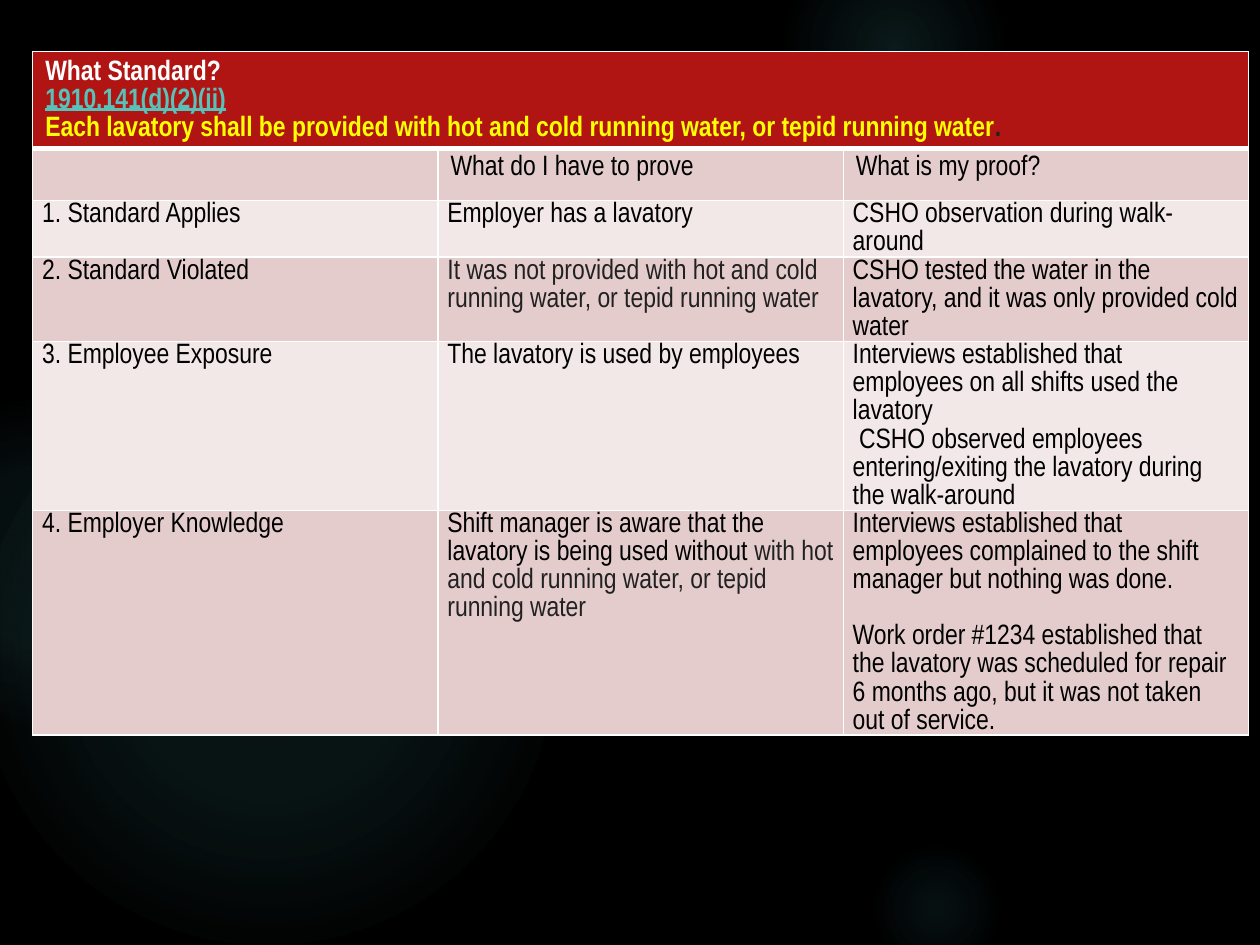
from dataclasses import dataclass

from lxml.etree import SubElement
from pptx import Presentation
from pptx.dml.color import RGBColor
from pptx.enum.shapes import MSO_SHAPE
from pptx.oxml.ns import qn
from pptx.util import Inches, Pt


@dataclass(frozen=True)
class Theme:
    font: str = "Arial Narrow"
    size: int = 16
    line_spacing: float = 1.07
    background: str = "000000"
    glow: str = "50B9C1"
    header: str = "B01513"
    dark_band: str = "E4CCCC"
    light_band: str = "F2E8E7"
    white: str = "FFFFFF"
    black: str = "000000"
    gray: str = "212121"
    link: str = "58C1BA"
    yellow: str = "FFFF00"
    border: int = 1
    header_border: int = 3


theme = Theme()

GLOWS = [
    (6.89, 1.83, 3.08, [(0, 7), (36, 6), (69, 0)]),
    (6.22, -0.5, 1.75, [(0, 14), (36, 7), (73, 0)]),
    (6.89, 6.67, 1.08, [(0, 9), (36, 5), (66, 0)]),
    (-0.17, 2.92, 4.58, [(0, 11), (36, 10), (75, 0)]),
    (-0.92, 3.17, 2.58, [(0, 8), (36, 8), (72, 0)]),
]

TITLE = [
    [("What Standard?", theme.white)],
    [("1910.141(d)(2)(ii)", theme.link)],
    [
        ("Each lavatory shall be provided with hot and cold running water, or tepid running water", theme.yellow),
        (".", theme.gray),
    ],
]
COLUMN_HEADINGS = ["", "What do I have to prove", "What is my proof?"]
ELEMENTS = [
    ["1. Standard Applies", "Employer has a lavatory", "CSHO observation during walk-around"],
    [
        "2. Standard Violated",
        [[("It was not provided with hot and cold running water, or tepid running water", theme.gray)]],
        "CSHO tested the water in the lavatory, and it was only provided cold water",
    ],
    [
        "3. Employee Exposure",
        "The lavatory is used by employees",
        [
            [("Interviews established that employees on all shifts used the lavatory", theme.black)],
            [(" CSHO observed employees entering/exiting the lavatory during the walk-around", theme.black)],
        ],
    ],
    [
        "4. Employer Knowledge",
        [[
            ("Shift manager is aware that the lavatory is being used without ", theme.black),
            ("with hot and cold running water, or tepid running water", theme.gray),
        ]],
        [
            [("Interviews established that employees complained to the shift manager but nothing was done.", theme.black)],
            [("Work order #1234 established that the lavatory was scheduled for repair 6 months ago, "
              "but it was not taken out of service.", theme.black)],
        ],
    ],
]

TABLE_LEFT, TABLE_TOP, TABLE_WIDTH = 0.26, 0.41, 9.65
ROW_HEIGHTS = [0.63, 0.41] + [0.45] * len(ELEMENTS)
COLUMN_COUNT = len(COLUMN_HEADINGS)
SIDE_MARGINS_TOTAL = 0.15


def add_glow(slide, left, top, diameter, stops):
    shape = slide.shapes.add_shape(
        MSO_SHAPE.OVAL, Inches(left), Inches(top), Inches(diameter), Inches(diameter)
    )
    shape.shadow.inherit = False
    shape.line.fill.background()
    shape.fill.gradient()
    gradient = shape.element.spPr.find(qn("a:gradFill"))
    for child in list(gradient):
        gradient.remove(child)
    stop_list = SubElement(gradient, qn("a:gsLst"))
    for position, opacity in stops:
        stop = SubElement(stop_list, qn("a:gs"), pos=str(position * 1000))
        color = SubElement(stop, qn("a:srgbClr"), val=theme.glow)
        SubElement(color, qn("a:alpha"), val=str(opacity * 1000))
    circle = SubElement(gradient, qn("a:path"), path="circle")
    SubElement(circle, qn("a:fillToRect"), l="50000", t="50000", r="50000", b="50000")


def style_cell(cell, fill, top_border, bottom_border):
    properties = cell._tc.get_or_add_tcPr()
    widths = {"L": theme.border, "R": theme.border, "T": top_border, "B": bottom_border}
    for side, width in widths.items():
        line = SubElement(properties, qn(f"a:ln{side}"), w=str(Pt(width)))
        SubElement(SubElement(line, qn("a:solidFill")), qn("a:srgbClr"), val=theme.white)
    cell.fill.solid()
    cell.fill.fore_color.rgb = RGBColor.from_string(fill)


def write_cell(cell, content, bold=False, line_spacing=theme.line_spacing):
    paragraphs = [[(content, theme.black)]] if isinstance(content, str) else content
    frame = cell.text_frame
    frame.text = "\n".join("" for _ in paragraphs)
    for paragraph, pieces in zip(frame.paragraphs, paragraphs):
        paragraph.line_spacing = line_spacing
        paragraph.font.size = Pt(theme.size)
        for text, color in pieces:
            run = paragraph.add_run()
            run.text = text
            run.font.name = theme.font
            run.font.size = Pt(theme.size)
            run.font.bold = bold
            run.font.underline = color == theme.link
            run.font.color.rgb = RGBColor.from_string(color)


def add_standard_table(slide):
    table = slide.shapes.add_table(
        len(ROW_HEIGHTS), COLUMN_COUNT, Inches(TABLE_LEFT), Inches(TABLE_TOP),
        Inches(TABLE_WIDTH), Inches(sum(ROW_HEIGHTS)),
    ).table
    for column in table.columns:
        column.width = Inches(TABLE_WIDTH / COLUMN_COUNT)
    for index, (row, height) in enumerate(zip(table.rows, ROW_HEIGHTS)):
        row.height = Inches(height)
        band = theme.dark_band if index % 2 else theme.light_band
        for cell in row.cells:
            style_cell(
                cell,
                band if index else theme.header,
                theme.header_border if index == 1 else theme.border,
                theme.border if index else theme.header_border,
            )
    title_cell = table.cell(0, 0)
    title_cell.merge(table.cell(0, COLUMN_COUNT - 1))
    write_cell(title_cell, TITLE, bold=True)
    for column, heading in enumerate(COLUMN_HEADINGS):
        write_cell(table.cell(1, column), heading, line_spacing=1.0)
    for row, element in enumerate(ELEMENTS, start=2):
        for column, content in enumerate(element):
            cell = table.cell(row, column)
            cell.margin_left = cell.margin_right = Inches(SIDE_MARGINS_TOTAL / 2)
            cell.margin_top = cell.margin_bottom = 0
            write_cell(cell, content)
    work_order = table.cell(len(ROW_HEIGHTS) - 1, COLUMN_COUNT - 1).text_frame.paragraphs[-1]
    work_order.space_before = Pt(theme.size)


def main():
    presentation = Presentation()
    presentation.slide_width = Inches(10)
    presentation.slide_height = Inches(7.5)
    slide = presentation.slides.add_slide(presentation.slide_layouts[6])
    slide.background.fill.solid()
    slide.background.fill.fore_color.rgb = RGBColor.from_string(theme.background)
    for glow in GLOWS:
        add_glow(slide, *glow)
    add_standard_table(slide)
    presentation.save("out.pptx")


if __name__ == "__main__":
    main()
